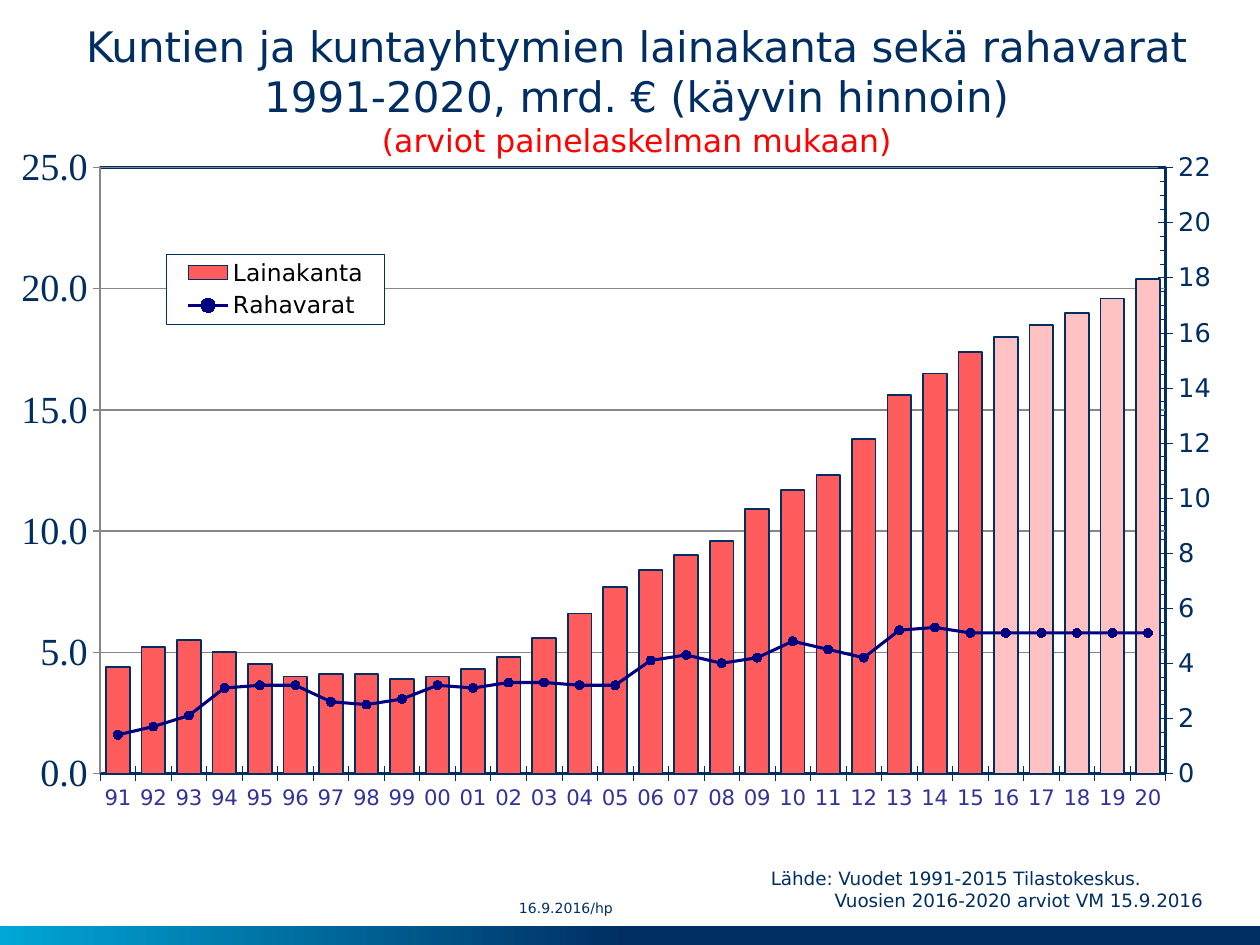
from dataclasses import dataclass

from pptx import Presentation
from pptx.chart.axis import ValueAxis
from pptx.chart.data import CategoryChartData
from pptx.dml.color import RGBColor
from pptx.enum.chart import XL_CHART_TYPE, XL_LEGEND_POSITION, XL_MARKER_STYLE, XL_TICK_MARK
from pptx.enum.dml import MSO_LINE
from pptx.enum.shapes import MSO_SHAPE
from pptx.enum.text import MSO_ANCHOR, MSO_AUTO_SIZE, PP_ALIGN
from pptx.oxml import parse_xml
from pptx.oxml.ns import nsdecls, qn
from pptx.util import Pt


@dataclass(frozen=True)
class Theme:
    font: str = "DejaVu Sans"
    chart_font: str = "Times New Roman"
    navy: str = "002E63"
    cyan: str = "00A6D6"
    red: str = "FF0000"
    black: str = "000000"
    category: str = "333399"
    debt: str = "FF5D5D"
    debt_estimate: str = "FFC1C1"
    cash: str = "000080"
    title: float = 24
    subtitle: float = 18
    source: float = 10.5
    date: float = 8
    chart: float = 21.9
    category_size: float = 12.2
    value_size: float = 14.7
    legend: float = 13.4


T = Theme()
YEARS = range(1991, 2021)
FIRST_ESTIMATE = 2016
DEBT = [4.4, 5.2, 5.5, 5, 4.5, 4, 4.1, 4.1, 3.9, 4, 4.3, 4.8, 5.6, 6.6, 7.7,
        8.4, 9, 9.6, 10.9, 11.7, 12.3, 13.8, 15.6, 16.5, 17.4, 18, 18.5, 19, 19.6, 20.4]
CASH = [1.4, 1.7, 2.1, 3.1, 3.2, 3.2, 2.6, 2.5, 2.7, 3.2, 3.1, 3.3, 3.3, 3.2, 3.2,
        4.1, 4.3, 4, 4.2, 4.8, 4.5, 4.2, 5.2, 5.3, 5.1, 5.1, 5.1, 5.1, 5.1, 5.1]


def set_attrs(obj, **values):
    for name, value in values.items():
        setattr(obj, name, value)


def style_font(font, size, color, name=T.font):
    set_attrs(font, size=Pt(size), name=name, bold=False)
    font.color.rgb = RGBColor.from_string(color)


def style_line(line, color, width):
    line.color.rgb = RGBColor.from_string(color)
    line.width = Pt(width)


def paint(fill, color):
    fill.solid()
    fill.fore_color.rgb = RGBColor.from_string(color)


def add_run(p, text, size, color=T.navy):
    r = p.add_run()
    r.text = text
    style_font(r.font, size, color)


def add_footer_band(s):
    sp = s.shapes.add_shape(MSO_SHAPE.RECTANGLE, 0, Pt(529.2), Pt(720), Pt(10.8))
    sp.shadow.inherit = False
    sp.line.fill.background()
    sp.fill.gradient()
    sp.fill.gradient_angle = 180
    for stop, position, color in zip(sp.fill.gradient_stops, (0.5, 1), (T.navy, T.cyan)):
        stop.position = position
        stop.color.rgb = RGBColor.from_string(color)


def fill_title(s):
    sp = s.shapes.title
    set_attrs(sp, left=Pt(25.2), top=Pt(9.4), width=Pt(677.5), height=Pt(85))
    tf = sp.text_frame
    set_attrs(tf, margin_left=0, margin_right=0, word_wrap=True,
              vertical_anchor=MSO_ANCHOR.BOTTOM, auto_size=MSO_AUTO_SIZE.NONE)
    p = tf.paragraphs[0]
    p.alignment = PP_ALIGN.CENTER
    for text in ("Kuntien ja kuntayhtymien lainakanta sekä rahavarat",
                 "1991-2020, mrd. € (käyvin hinnoin)"):
        add_run(p, text, T.title)
        p.add_line_break()
    add_run(p, "(arviot painelaskelman mukaan)", T.subtitle, T.red)


def add_note(s, box, lines, size, **frame):
    tf = s.shapes.add_textbox(*map(Pt, box)).text_frame
    set_attrs(tf, word_wrap=True, **frame)
    for i, (text, indent) in enumerate(lines):
        p = tf.add_paragraph() if i else tf.paragraphs[0]
        if indent:
            p._p.get_or_add_pPr().set("marL", str(Pt(indent)))
        add_run(p, text, size)


def layout_xml(x, y, w, h, inner=False):
    target = '<c:layoutTarget val="inner"/>' if inner else ""
    return parse_xml(
        f'<c:layout {nsdecls("c")}><c:manualLayout>{target}'
        '<c:xMode val="edge"/><c:yMode val="edge"/>'
        f'<c:x val="{x}"/><c:y val="{y}"/><c:w val="{w}"/><c:h val="{h}"/>'
        '</c:manualLayout></c:layout>')


def frame_xml(width, fill):
    return parse_xml(
        f'<c:spPr {nsdecls("c", "a")}>{fill}<a:ln w="{Pt(width)}"><a:solidFill>'
        f'<a:srgbClr val="{T.navy}"/></a:solidFill></a:ln></c:spPr>')


def drop(parent, tag):
    for el in parent.findall(qn(tag)):
        parent.remove(el)


def axis_xml(tag, ax_id, cross_id, deleted, pos, crosses):
    return parse_xml(
        f'<c:{tag} {nsdecls("c")}><c:axId val="{ax_id}"/>'
        '<c:scaling><c:orientation val="minMax"/></c:scaling>'
        f'<c:delete val="{deleted}"/><c:axPos val="{pos}"/>'
        '<c:numFmt formatCode="0" sourceLinked="0"/>'
        '<c:majorTickMark val="cross"/><c:minorTickMark val="none"/>'
        f'<c:tickLblPos val="nextTo"/><c:crossAx val="{cross_id}"/>'
        f'<c:crosses val="{crosses}"/></c:{tag}>')


def move_to_right_axis(chart):
    area = chart._chartSpace.find(".//" + qn("c:plotArea"))
    bars = area.find(qn("c:barChart"))
    ser = bars.findall(qn("c:ser"))[1]
    drop(ser, "c:invertIfNegative")
    lines = parse_xml(
        f'<c:lineChart {nsdecls("c")}><c:grouping val="standard"/><c:varyColors val="0"/>'
        '<c:marker val="1"/><c:axId val="101"/><c:axId val="102"/></c:lineChart>')
    lines.insert(2, ser)
    bars.addnext(lines)
    right = axis_xml("valAx", 102, 101, 0, "r", "max")
    hidden = axis_xml("catAx", 101, 102, 1, "b", "autoZero")
    area.findall(qn("c:valAx"))[-1].addnext(right)
    right.addnext(hidden)
    drop(area, "c:layout")
    area.insert(0, layout_xml(0.061, 0.036, 0.88, 0.868, inner=True))
    drop(area, "c:spPr")
    area.append(frame_xml(1.5, "<a:noFill/>"))
    return ValueAxis(right)


def style_axis(axis, size, color, **values):
    set_attrs(axis, major_tick_mark=XL_TICK_MARK.CROSS, **values)
    style_font(axis.tick_labels.font, size, color)
    style_line(axis.format.line, T.navy, 0.3)


def style_legend(chart):
    chart.has_legend = True
    legend = chart.legend
    set_attrs(legend, position=XL_LEGEND_POSITION.RIGHT, include_in_layout=False)
    style_font(legend.font, T.legend, T.black)
    el = legend._element
    drop(el, "c:layout")
    el.find(qn("c:legendPos")).addnext(layout_xml(0.116, 0.16, 0.18, 0.1))
    white = '<a:solidFill><a:srgbClr val="FFFFFF"/></a:solidFill>'
    el.find(qn("c:overlay")).addnext(frame_xml(0.25, white))


def add_debt_chart(s):
    data = CategoryChartData(number_format="0.0")
    data.categories = [f"{year % 100:02d}" for year in YEARS]
    data.add_series("Lainakanta", DEBT)
    data.add_series("Rahavarat", CASH)
    chart = s.shapes.add_chart(XL_CHART_TYPE.COLUMN_CLUSTERED, Pt(12.2), Pt(81.4),
                               Pt(694.8), Pt(398.9), data).chart
    chart.has_title = False
    style_font(chart.font, T.chart, T.navy, T.chart_font)
    right_axis = move_to_right_axis(chart)
    bars, lines = chart.plots
    set_attrs(bars, gap_width=50, vary_by_categories=False)

    debt = bars.series[0]
    paint(debt.format.fill, T.debt)
    style_line(debt.format.line, T.navy, 1)
    for i, year in enumerate(YEARS):
        if year >= FIRST_ESTIMATE:
            fmt = debt.points[i].format
            paint(fmt.fill, T.debt_estimate)
            style_line(fmt.line, T.navy, 1)

    cash = lines.series[0]
    cash.smooth = False
    style_line(cash.format.line, T.cash, 1.75)
    set_attrs(cash.marker, style=XL_MARKER_STYLE.CIRCLE, size=5)
    paint(cash.marker.format.fill, T.cash)
    style_line(cash.marker.format.line, T.cash, 0.75)

    style_axis(chart.category_axis, T.category_size, T.category)
    scale = dict(minimum_scale=0, maximum_scale=22, major_unit=2)
    left_axis = chart.value_axis
    style_axis(left_axis, T.value_size, T.navy, minor_unit=0.5,
               minor_tick_mark=XL_TICK_MARK.INSIDE, **scale)
    set_attrs(left_axis.tick_labels, number_format="0", number_format_is_linked=False)
    grid = left_axis.major_gridlines.format.line
    style_line(grid, T.navy, 0.25)
    grid.dash_style = MSO_LINE.ROUND_DOT
    style_axis(right_axis, T.value_size, T.navy, **scale)
    style_legend(chart)


def main():
    prs = Presentation()
    set_attrs(prs, slide_width=Pt(720), slide_height=Pt(540))
    s = prs.slides.add_slide(prs.slide_layouts[5])
    add_footer_band(s)
    fill_title(s)
    add_debt_chart(s)
    add_note(s, (433.4, 491.8, 289.4, 33.8),
             [("Lähde: Vuodet 1991-2015 Tilastokeskus.", 0),
              ("Vuosien 2016-2020 arviot VM 15.9.2016", 36.5)],
             T.source, auto_size=MSO_AUTO_SIZE.SHAPE_TO_FIT_TEXT)
    add_note(s, (296.6, 508.3, 244, 20.9), [("16.9.2016/hp", 0)], T.date,
             vertical_anchor=MSO_ANCHOR.MIDDLE,
             margin_left=0, margin_right=0, margin_top=0, margin_bottom=0)
    prs.save("out.pptx")


if __name__ == "__main__":
    main()
